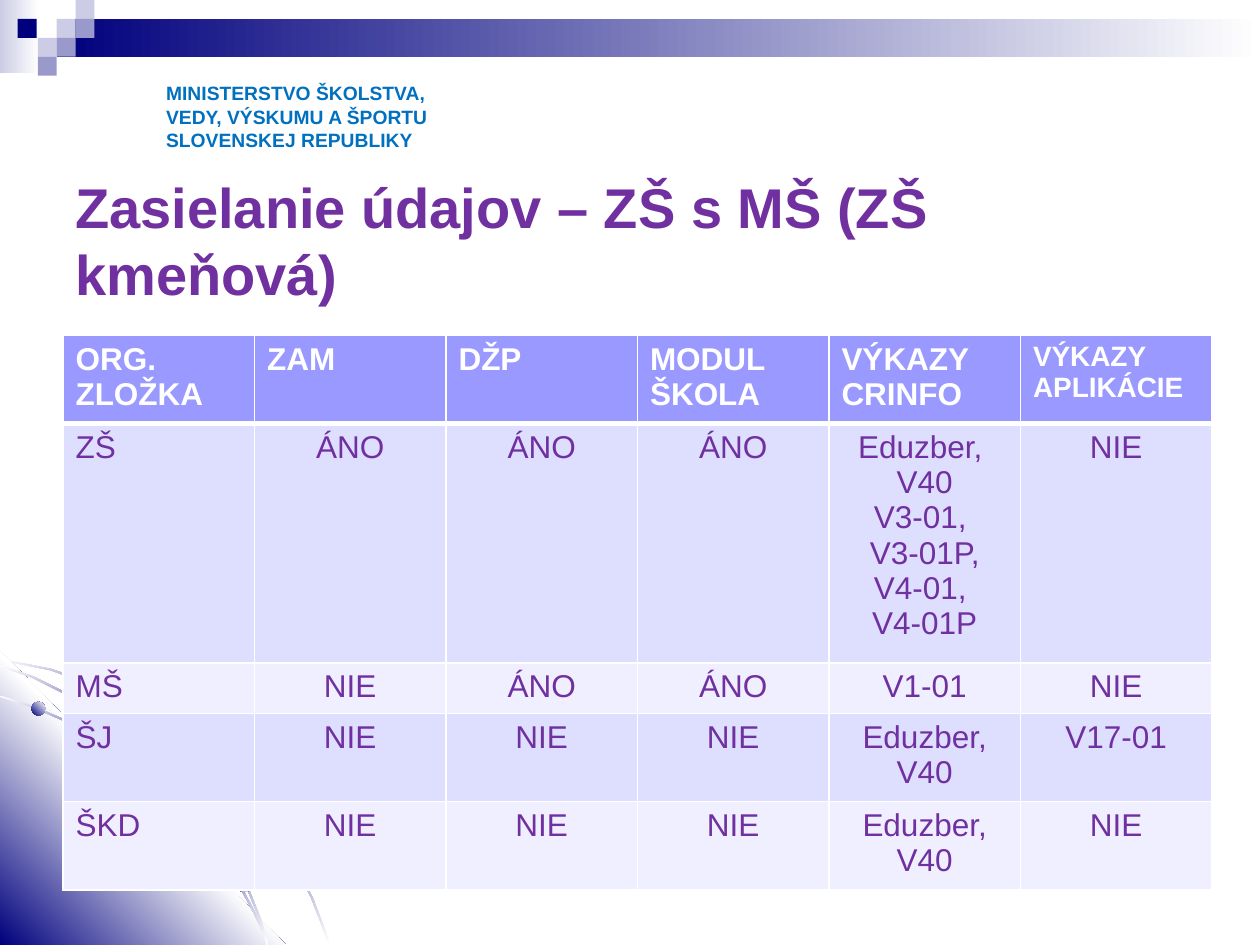
from lxml.etree import SubElement
from pptx import Presentation
from pptx.dml.color import RGBColor
from pptx.enum.shapes import MSO_SHAPE
from pptx.enum.text import MSO_ANCHOR, PP_ALIGN
from pptx.oxml.ns import qn
from pptx.util import Inches, Pt

NAVY, LAVENDER, PERIWINKLE, WHITE = "00007D", "CCCCE6", "9999CC", "FFFFFF"
PURPLE, BLUE = "7030A0", "0070C0"
HEADER_FILL, BAND_FILLS = "9999FF", ("DEDEFF", "EFEFFF")

# Left, top and colour of the small squares in the top corner
SQUARES = [
    (0.45, 0.15, LAVENDER), (0.6, 0, LAVENDER), (0.6, 0.15, PERIWINKLE),
    (0.3, 0.3, LAVENDER), (0.14, 0.15, NAVY), (0.45, 0.3, PERIWINKLE),
    (0.3, 0.45, PERIWINKLE),
]

# Lower edges of the thin arcs in the bottom corner
OUTER_ARC = [
    (0, 5.24), (0.2, 5.28), (0.4, 5.32), (0.68, 5.42), (0.95, 5.53),
    (1.22, 5.69), (1.47, 5.86), (1.7, 6.05), (1.91, 6.27), (2.1, 6.51),
    (2.28, 6.77), (2.38, 6.95), (2.47, 7.13), (2.54, 7.31), (2.61, 7.5),
]
INNER_ARC = [
    (0, 5.53), (0.27, 5.62), (0.55, 5.74), (0.81, 5.9), (1.06, 6.06),
    (1.29, 6.26), (1.5, 6.48), (1.7, 6.72), (1.87, 6.98), (2.01, 7.24),
    (2.07, 7.37), (2.12, 7.5),
]
MIDDLE_ARC = [
    (0, 5.29), (0.26, 5.38), (0.52, 5.51), (0.77, 5.65), (1, 5.83),
    (1.22, 6.02), (1.43, 6.23), (1.6, 6.46), (1.78, 6.71), (1.88, 6.9),
    (1.98, 7.1), (2.06, 7.3), (2.12, 7.5),
]

# Left, top, size and gradient angle of the dots on the arcs
DOTS = [(0.25, 5.57, 0.11, 315), (1.88, 6.96, 0.12, 45), (0.97, 5.5, 0.15, 315)]

HEADERS = ["ORG. ZLOŽKA", "ZAM", "DŽP", "MODUL ŠKOLA", "VÝKAZY\nCRINFO",
           "VÝKAZY APLIKÁCIE"]
UNITS = [
    ["ZŠ", "ÁNO", "ÁNO", "ÁNO",
     "Eduzber, \nV40\nV3-01, \nV3-01P, V4-01, \nV4-01P", "NIE"],
    ["MŠ", "NIE", "ÁNO", "ÁNO", "V1-01", "NIE"],
    ["ŠJ", "NIE", "NIE", "NIE", "Eduzber, V40", "V17-01"],
    ["ŠKD", "NIE", "NIE", "NIE", "Eduzber, V40", "NIE"],
]
ROW_HEIGHTS = [0.69, 1.87, 0.39, 0.69, 0.69]


def rgb(color):
    return RGBColor.from_string(color)


def add_solid(parent, color):
    fill = SubElement(parent, qn("a:solidFill"))
    SubElement(fill, qn("a:srgbClr"), val=color)


def paint(shape, colors, angle=0):
    """Fill with one colour, or with evenly spaced stops at a clockwise angle."""
    shape.shadow.inherit = False
    shape.line.fill.background()
    if len(colors) == 1:
        shape.fill.solid()
        shape.fill.fore_color.rgb = rgb(colors[0])
        return
    shape.fill.gradient()
    gradient = shape._element.spPr.find(qn("a:gradFill"))
    stops = gradient.find(qn("a:gsLst"))
    for stop in list(stops):
        stops.remove(stop)
    for i, color in enumerate(colors):
        position = i * 100000 // (len(colors) - 1)
        stop = SubElement(stops, qn("a:gs"), pos=str(position))
        SubElement(stop, qn("a:srgbClr"), val=color)
    gradient.find(qn("a:lin")).set("ang", str(angle * 60000))


def add_preset(slide, kind, left, top, width, height, colors, angle=0):
    shape = slide.shapes.add_shape(
        kind, Inches(left), Inches(top), Inches(width), Inches(height))
    paint(shape, colors, angle)


def add_outline(slide, points, colors, angle):
    corners = [(Inches(x), Inches(y)) for x, y in points]
    builder = slide.shapes.build_freeform(*corners[0])
    builder.add_line_segments(corners[1:], close=True)
    paint(builder.convert_to_shape(), colors, angle)


def add_arc(slide, edge):
    upper_edge = [(x + 0.01 if x else 0, y - 0.01) for x, y in reversed(edge)]
    add_outline(slide, edge + upper_edge, [WHITE, NAVY, WHITE], 45)


def write(frame, text, size=18, color=PURPLE, bold=False, align=PP_ALIGN.LEFT):
    frame.word_wrap = True
    for i, line in enumerate(text.split("\n")):
        paragraph = frame.add_paragraph() if i else frame.paragraphs[0]
        paragraph.alignment = align
        run = paragraph.add_run()
        run.text = line
        run.font.name = "Arial"
        run.font.size = Pt(size)
        run.font.bold = bold
        run.font.color.rgb = rgb(color)


def add_text(slide, left, top, width, height, text, anchor=MSO_ANCHOR.TOP,
             **text_format):
    box = slide.shapes.add_textbox(
        Inches(left), Inches(top), Inches(width), Inches(height))
    box.text_frame.vertical_anchor = anchor
    write(box.text_frame, text, **text_format)


def set_borders(cell, top=1, bottom=1):
    properties = cell._tc.get_or_add_tcPr()
    widths = {"a:lnL": 1, "a:lnR": 1, "a:lnT": top, "a:lnB": bottom}
    for tag, width in widths.items():
        add_solid(SubElement(properties, qn(tag), w=str(Pt(width))), WHITE)


def add_units_table(slide):
    table = slide.shapes.add_table(
        len(ROW_HEIGHTS), len(HEADERS), Inches(0.5), Inches(2.66),
        Inches(9.12), Inches(sum(ROW_HEIGHTS))).table
    for row, height in zip(table.rows, ROW_HEIGHTS):
        row.height = Inches(height)
    for r, texts in enumerate([HEADERS] + UNITS):
        for c, text in enumerate(texts):
            cell = table.cell(r, c)
            set_borders(cell, top=3 if r == 1 else 1, bottom=1 if r else 3)
            cell.fill.solid()
            if r == 0:
                cell.fill.fore_color.rgb = rgb(HEADER_FILL)
                size = 16 if c == len(HEADERS) - 1 else 18
                write(cell.text_frame, text, size=size, color=WHITE, bold=True)
            else:
                cell.fill.fore_color.rgb = rgb(BAND_FILLS[(r - 1) % 2])
                write(cell.text_frame, text,
                      align=PP_ALIGN.CENTER if c else PP_ALIGN.LEFT)


def add_top_band(slide):
    box = MSO_SHAPE.RECTANGLE
    add_preset(slide, box, 0, 0, 0.31, 0.58, [LAVENDER, WHITE])
    add_preset(slide, box, 0.45, 0.15, 9.55, 0.3, [NAVY, WHITE])
    for left, top, color in SQUARES:
        add_preset(slide, box, left, top, 0.15, 0.15, [color])


def add_bottom_corner(slide):
    add_arc(slide, OUTER_ARC)
    add_outline(slide, [(2.27, 7.5), (0, 7.5), (0, 5.16)],
                [NAVY, WHITE, NAVY], 315)
    add_arc(slide, INNER_ARC)
    add_arc(slide, MIDDLE_ARC)
    for left, top, size, angle in DOTS:
        add_preset(slide, MSO_SHAPE.OVAL, left, top, size, size,
                   [NAVY, WHITE], angle)


def main():
    deck = Presentation()
    deck.slide_width, deck.slide_height = Inches(10), Inches(7.5)
    slide = deck.slides.add_slide(deck.slide_layouts[6])

    # Decoration
    add_top_band(slide)
    add_bottom_corner(slide)

    # Ministry name and title
    add_text(slide, 1.22, 0.6, 2.44, 0.66,
             "MINISTERSTVO ŠKOLSTVA,\nVEDY, VÝSKUMU A ŠPORTU\n"
             "SLOVENSKEJ REPUBLIKY", size=11, color=BLUE, bold=True)
    add_text(slide, 0.5, 1.23, 9, 1.34,
             "Zasielanie údajov – ZŠ s MŠ (ZŠ kmeňová)",
             anchor=MSO_ANCHOR.MIDDLE, size=32, bold=True)

    # Reports by organisational unit
    add_units_table(slide)
    deck.save("out.pptx")


if __name__ == "__main__":
    main()
